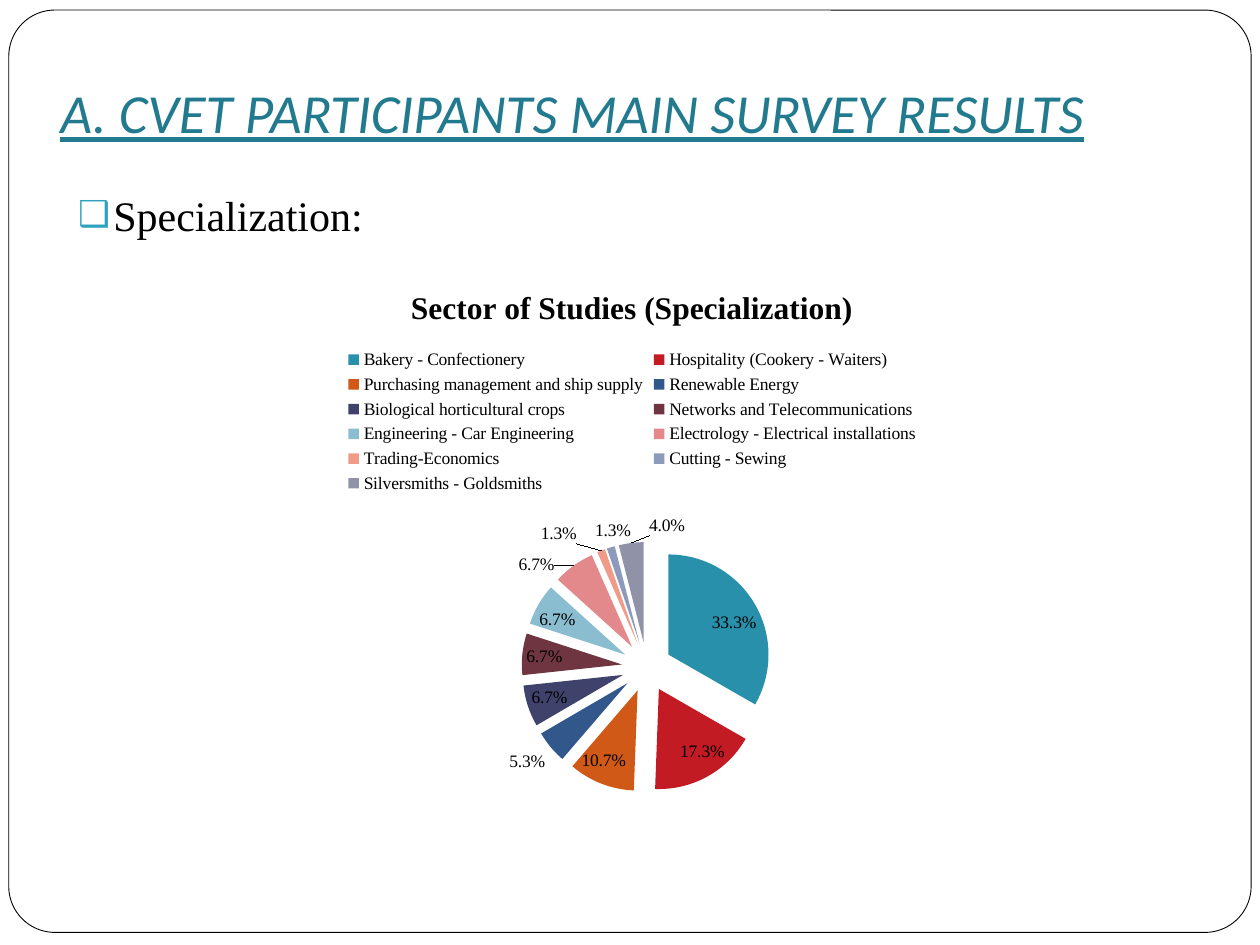
from lxml import etree
from pptx import Presentation
from pptx.chart.data import CategoryChartData as Data
from pptx.dml.color import RGBColor as RGB
from pptx.enum.chart import XL_CHART_TYPE as Kind, XL_LABEL_POSITION as Spot, XL_LEGEND_POSITION as Side
from pptx.enum.shapes import MSO_SHAPE as Shape
from pptx.enum.text import MSO_ANCHOR as Anchor, MSO_AUTO_SIZE as Auto, PP_ALIGN as Align
from pptx.oxml.ns import qn
from pptx.util import Inches, Pt

BLACK = RGB(0x00, 0x00, 0x00)
WHITE = RGB(0xFF, 0xFF, 0xFF)
TEAL = RGB(0x22, 0x7A, 0x8F)
AQUA = RGB(0x2D, 0xA2, 0xBF)
SERIF = "Times New Roman"

SECTORS = [
    ("Bakery - Confectionery", 33.3, RGB(0x29, 0x90, 0xAB)),
    ("Hospitality (Cookery - Waiters)", 17.3, RGB(0xC2, 0x1B, 0x23)),
    ("Purchasing management and ship supply", 10.7, RGB(0xD0, 0x59, 0x17)),
    ("Renewable Energy", 5.3, RGB(0x32, 0x58, 0x8B)),
    ("Biological horticultural crops", 6.7, RGB(0x3F, 0x42, 0x6B)),
    ("Networks and Telecommunications", 6.7, RGB(0x6F, 0x35, 0x41)),
    ("Engineering - Car Engineering", 6.7, RGB(0x8B, 0xBD, 0xD0)),
    ("Electrology - Electrical installations", 6.7, RGB(0xE3, 0x89, 0x8C)),
    ("Trading-Economics", 1.3, RGB(0xF0, 0x9B, 0x88)),
    ("Cutting - Sewing", 1.3, RGB(0x8C, 0x9B, 0xBC)),
    ("Silversmiths - Goldsmiths", 4, RGB(0x90, 0x92, 0xA8)),
]


def place(shape, left, top, width, height):
    shape.left, shape.top = Inches(left), Inches(top)
    shape.width, shape.height = Inches(width), Inches(height)


def style(font, name, size, color):
    font.name, font.size = name, Pt(size)
    font.color.rgb = color


deck = Presentation()
deck.slide_width, deck.slide_height = Inches(10), Inches(7.5)
slide = deck.slides.add_slide(deck.slide_layouts[1])

frame = slide.shapes.add_shape(
    Shape.ROUNDED_RECTANGLE, Inches(0.07), Inches(0.08), Inches(9.86), Inches(7.32))
frame.adjustments[0] = 0.05
frame.shadow.inherit = False
frame.fill.solid()
frame.fill.fore_color.rgb = WHITE
frame.line.color.rgb = BLACK
frame.line.width = Pt(0.5)
slide.shapes._spTree.insert(2, frame._element)

title = slide.shapes.title
place(title, 0.38, 0, 8.9, 1.25)
text = title.text_frame
text.text = "A. CVET PARTICIPANTS MAIN SURVEY RESULTS"
text.auto_size = Auto.NONE
text.vertical_anchor = Anchor.BOTTOM
text.margin_bottom = Inches(0.1)
para = text.paragraphs[0]
para.alignment = Align.LEFT
font = para.runs[0].font
style(font, "Calibri", 31.5, TEAL)
font.italic = font.underline = True

body = slide.placeholders[1]
place(body, 0.52, 1.45, 8.51, 5.43)
text = body.text_frame
text.text = "Specialization:"
text.auto_size = Auto.NONE
para = text.paragraphs[0]
para.space_before = Pt(4)
style(para.runs[0].font, SERIF, 24, BLACK)
props = para._p.get_or_add_pPr()
props.set("marL", str(Inches(0.28)))
props.set("indent", str(Inches(-0.3)))
tint = etree.SubElement(props, qn("a:buClr"))
etree.SubElement(tint, qn("a:srgbClr"), val=str(AQUA))
etree.SubElement(props, qn("a:buSzPct"), val="85000")
etree.SubElement(props, qn("a:buChar"), char="❑")

data = Data()
data.categories = [name for name, share, color in SECTORS]
data.add_series("Series 1", [share for name, share, color in SECTORS])
chart = slide.shapes.add_chart(
    Kind.PIE, Inches(1.34), Inches(2.1), Inches(7.35), Inches(4.5), data).chart
style(chart.font, SERIF, 10, BLACK)

chart.has_title = True
head = chart.chart_title.text_frame
head.text = "Sector of Studies (Specialization)"
font = head.paragraphs[0].runs[0].font
style(font, SERIF, 18, BLACK)
font.bold = True

chart.has_legend = True
chart.legend.position = Side.TOP
chart.legend.include_in_layout = False

plot = chart.plots[0]
plot.vary_by_categories = True
pie = plot.series[0]
for i, (name, share, color) in enumerate(SECTORS):
    fill = pie.points[i].format.fill
    fill.solid()
    fill.fore_color.rgb = color
burst = etree.Element(qn("c:explosion"), val="25")
pie._element.find(qn("c:dPt")).addprevious(burst)

labels = pie.data_labels
labels.show_value = False
labels.show_percentage = True
labels.number_format = "0.0%"
labels.number_format_is_linked = False
labels.position = Spot.BEST_FIT
style(labels.font, SERIF, 10, BLACK)

deck.save("out.pptx")
